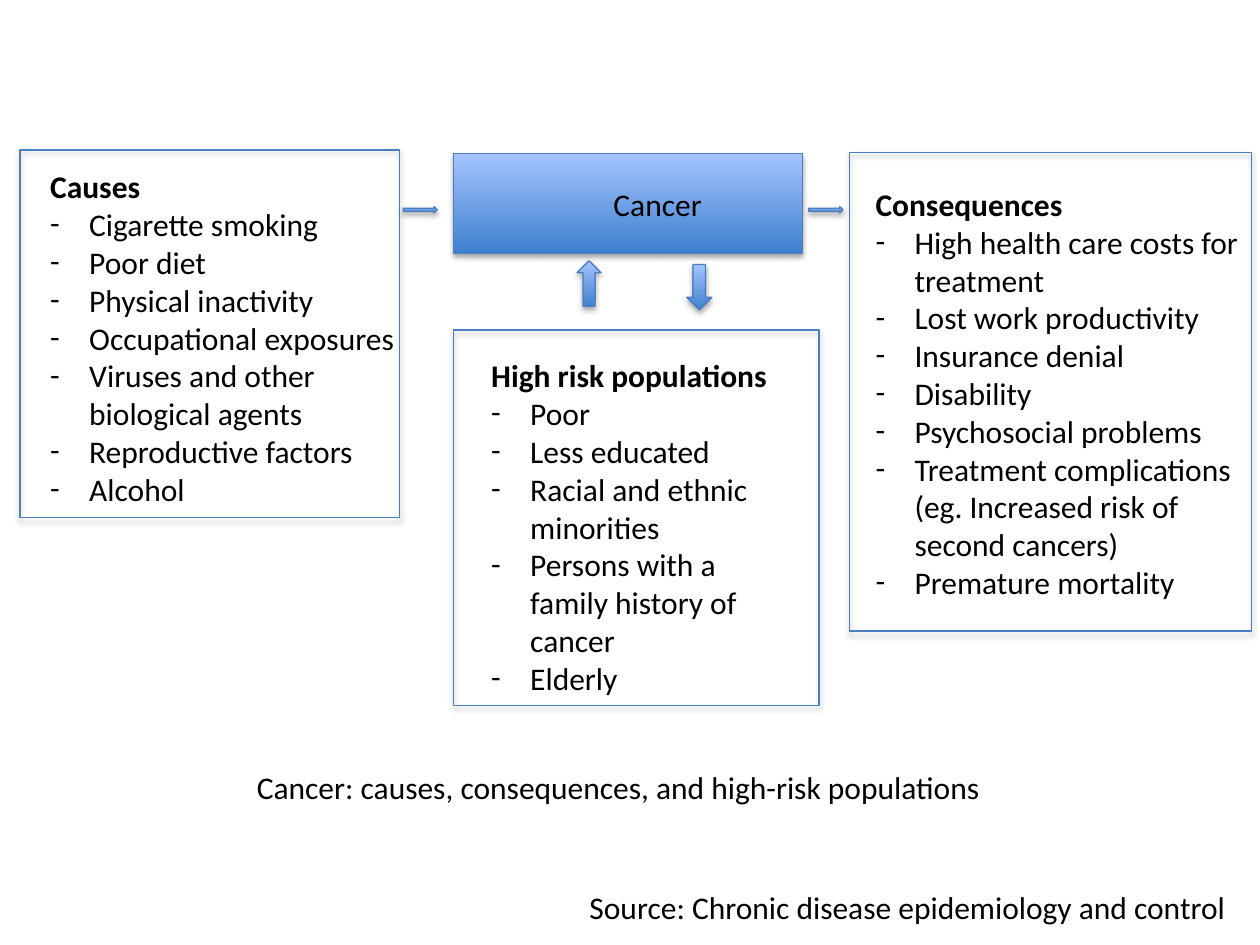
from dataclasses import dataclass
from lxml import etree
from pptx import Presentation
from pptx import util as u
from pptx.dml.color import RGBColor
from pptx.enum import shapes, text
from pptx.oxml import ns


@dataclass(frozen=True)
class Theme:
    font: str = "Calibri"
    size: int = 18
    ink: str = "000000"
    line: str = "4B7EBC"
    dark: str = "3F80CE"
    light: str = "A4C4FF"
    indent: float = 0.31


T = Theme()
KIND = shapes.MSO_SHAPE

# Panels: frame, text area (left, top, width, height), heading, items
PANELS = [
    ((0.16, 1.19, 3.01, 2.92), (0.3, 1.28, 3.03, 2.83), "Causes", [
        "Cigarette smoking", "Poor diet", "Physical inactivity",
        "Occupational exposures", "Viruses and other biological agents",
        "Reproductive factors", "Alcohol"]),
    ((3.6, 2.62, 2.9, 2.98), (3.8, 2.78, 2.62, 2.83), "High risk populations", [
        "Poor", "Less educated", "Racial and ethnic minorities",
        "Persons with a family history of cancer", "Elderly"]),
    ((6.74, 1.21, 3.19, 3.8), (6.85, 1.42, 3.08, 3.43), "Consequences", [
        "High health care costs for treatment", "Lost work productivity",
        "Insurance denial", "Disability", "Psychosocial problems",
        "Treatment complications (eg. Increased risk of second cancers)",
        "Premature mortality"]),
]
CENTER = (3.6, 1.22, 2.77, 0.79)
ARROWS = [
    (KIND.RIGHT_ARROW, (3.2, 1.64, 0.27, 0.05)),
    (KIND.RIGHT_ARROW, (6.42, 1.64, 0.27, 0.05)),
    (KIND.DOWN_ARROW, (5.45, 2.1, 0.2, 0.36)),
    (KIND.UP_ARROW, (4.58, 2.07, 0.19, 0.36)),
]
LABELS = [
    ("Cancer", (4.77, 1.42, 1.09, 0.4)),
    ("Cancer: causes, consequences, and high-risk populations",
     (1.94, 6.05, 6.2, 0.4)),
    ("Source: Chronic disease epidemiology and control",
     (4.58, 7, 5.35, 0.4)),
]


def color(code):
    return RGBColor.from_string(code)


def inches(box):
    return [u.Inches(v) for v in box]


def shade(shape):
    """Give the shape a soft shadow straight below it."""
    shape.shadow.inherit = False
    effects = shape._element.spPr.find(ns.qn("a:effectLst"))
    drop = etree.SubElement(effects, ns.qn("a:outerShdw"), blurRad="40000",
                            dist="23000", dir="5400000", rotWithShape="0")
    tint = etree.SubElement(drop, ns.qn("a:srgbClr"), val=T.ink)
    etree.SubElement(tint, ns.qn("a:alpha"), val="35000")


def add_shape(slide, kind, box, filled=True):
    shape = slide.shapes.add_shape(kind, *inches(box))
    if filled:
        shape.fill.gradient()
        shape.fill.gradient_angle = 90
        stops = zip(shape.fill.gradient_stops, (T.dark, T.light), (0, 1))
        for stop, code, place in stops:
            stop.color.rgb = color(code)
            stop.position = place
    else:
        shape.fill.background()
    shape.line.color.rgb = color(T.line)
    shape.line.width = u.Pt(0.75)
    shade(shape)


def dash(para):
    props = para._p.get_or_add_pPr()
    step = u.Inches(T.indent)
    props.set("marL", str(step))
    props.set("indent", str(-step))
    etree.SubElement(props, ns.qn("a:buFont"), typeface=T.font)
    etree.SubElement(props, ns.qn("a:buChar"), char="-")


def add_text(slide, box, head, items=()):
    frame = slide.shapes.add_textbox(*inches(box)).text_frame
    frame.word_wrap = True
    frame.auto_size = text.MSO_AUTO_SIZE.SHAPE_TO_FIT_TEXT
    frame.text = "\n".join([head, *items])
    for i, para in enumerate(frame.paragraphs):
        if i:
            dash(para)
        font = para.runs[0].font
        font.name, font.size = T.font, u.Pt(T.size)
        font.color.rgb = color(T.ink)
        font.bold = bool(items) and i == 0


def main():
    deck = Presentation()
    deck.slide_width, deck.slide_height = inches((10, 7.5))
    slide = deck.slides.add_slide(deck.slide_layouts.get_by_name("Blank"))
    add_shape(slide, KIND.RECTANGLE, CENTER)
    for frame, area, head, items in PANELS:
        add_shape(slide, KIND.RECTANGLE, frame, filled=False)
        add_text(slide, area, head, items)
    for kind, box in ARROWS:
        add_shape(slide, kind, box)
    for label, box in LABELS:
        add_text(slide, box, label)
    deck.save("out.pptx")


if __name__ == "__main__":
    main()
